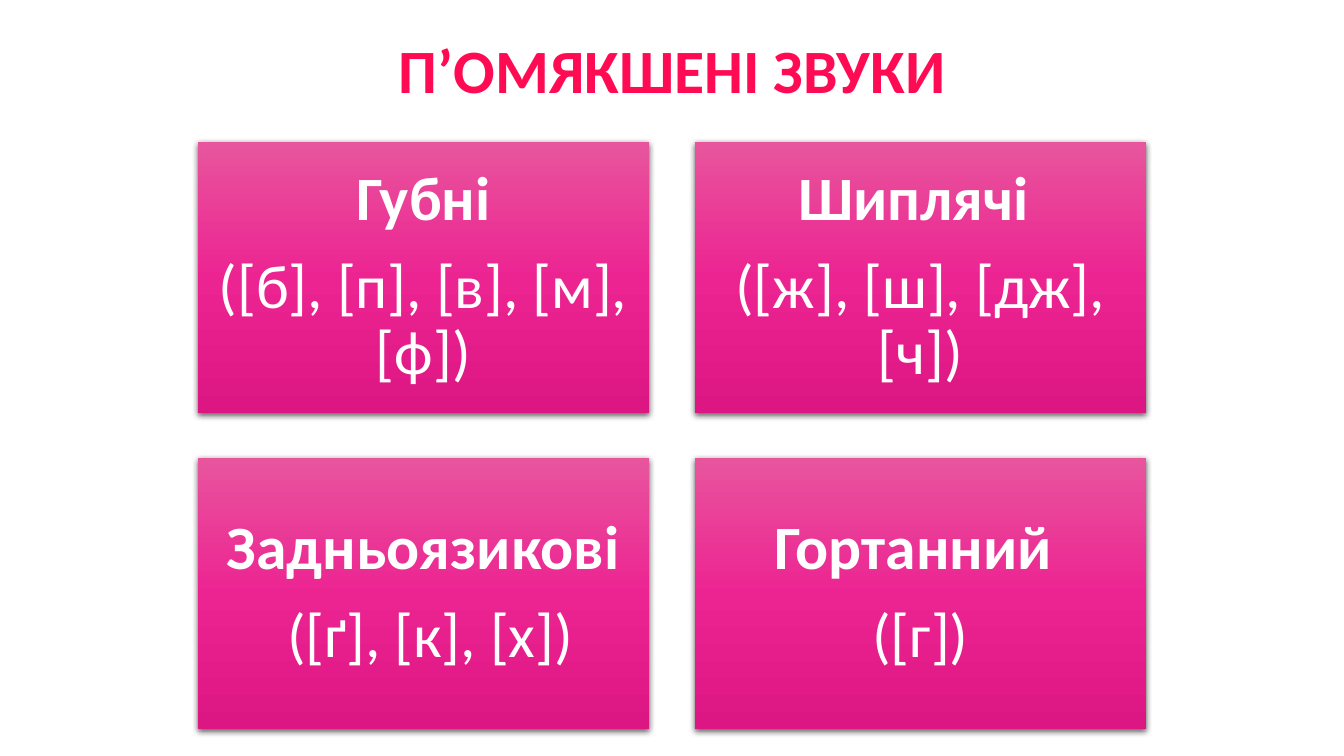
import copy

import lxml.etree
import pptx
import pptx.dml.color
import pptx.enum.dml
import pptx.enum.shapes
import pptx.enum.text
import pptx.oxml
import pptx.oxml.ns
import pptx.util

RGBColor = pptx.dml.color.RGBColor
WHITE = RGBColor(0xFF, 0xFF, 0xFF)
CRIMSON = RGBColor(0xFF, 0x0B, 0x53)
CARD_STOPS = [
    (0, RGBColor(0xE8, 0x55, 0x9D)),
    (0.5, RGBColor(0xEC, 0x24, 0x92)),
    (1, RGBColor(0xDC, 0x16, 0x83)),
]
SHADOW = (
    f'<a:outerShdw {pptx.oxml.ns.nsdecls("a")} blurRad="57150" dist="19050" '
    'dir="5400000" algn="ctr" rotWithShape="0">'
    '<a:srgbClr val="000000"><a:alpha val="63000"/></a:srgbClr></a:outerShdw>'
)

SOUND_GROUPS = [
    ("Губні", "([б], [п], [в], [м], [ф])"),
    ("Шиплячі ", "([ж], [ш], [дж], [ч])"),
    ("Задньоязикові", " ([ґ], [к], [х])"),
    ("Гортанний ", "([г])"),
]


def write(p, text, *, size=44, color=WHITE, bold=False, after=0):
    p.alignment = pptx.enum.text.PP_ALIGN.CENTER
    p.line_spacing = 0.9
    p.space_after = pptx.util.Pt(after)
    r = p.add_run()
    r.text = text
    r.font.name = "Calibri"
    r.font.size = pptx.util.Pt(size)
    r.font.bold = bold
    r.font.color.rgb = color


class SlideBuilder:
    left, top = 1.96, 1.41
    card_width, card_height = 4.48, 2.69
    column_step, row_step = 4.93, 3.13
    inset = 0.18
    paragraph_gap = 15.4

    def __init__(self, slide):
        self.s = slide

    def title(self, text):
        box = [pptx.util.Inches(v) for v in (0.92, 0, 11.5, 1.45)]
        tf = self.s.shapes.add_textbox(*box).text_frame
        tf.word_wrap = True
        tf.vertical_anchor = pptx.enum.text.MSO_ANCHOR.MIDDLE
        write(tf.paragraphs[0], text, color=CRIMSON, bold=True)

    def card(self, column, row, heading, sounds):
        sp = self.s.shapes.add_shape(
            pptx.enum.shapes.MSO_SHAPE.RECTANGLE,
            pptx.util.Inches(self.left + column * self.column_step),
            pptx.util.Inches(self.top + row * self.row_step),
            pptx.util.Inches(self.card_width),
            pptx.util.Inches(self.card_height),
        )
        self.paint(sp)
        tf = sp.text_frame
        tf.word_wrap = True
        tf.vertical_anchor = pptx.enum.text.MSO_ANCHOR.MIDDLE
        tf.margin_left = tf.margin_right = pptx.util.Inches(self.inset)
        tf.margin_top = tf.margin_bottom = pptx.util.Inches(self.inset)
        write(tf.paragraphs[0], heading, bold=True, after=self.paragraph_gap)
        write(tf.add_paragraph(), sounds, after=self.paragraph_gap)

    def paint(self, sp):
        sp.fill.gradient()
        sp.fill.gradient_angle = 270
        stop_list = sp._element.spPr.find(".//" + pptx.oxml.ns.qn("a:gsLst"))
        stop_list.append(copy.deepcopy(stop_list[0]))
        for stop, (position, color) in zip(sp.fill.gradient_stops, CARD_STOPS):
            stop.position = position
            stop.color.rgb = color
        sp.line.fill.background()
        sp.shadow.inherit = False
        effects = sp._element.spPr.find(pptx.oxml.ns.qn("a:effectLst"))
        effects.append(pptx.oxml.parse_xml(SHADOW))


def main():
    prs = pptx.Presentation()
    prs.slide_width = pptx.util.Inches(13.33)
    prs.slide_height = pptx.util.Inches(7.5)
    builder = SlideBuilder(prs.slides.add_slide(prs.slide_layouts[6]))
    builder.title("П’ОМЯКШЕНІ ЗВУКИ")
    for i, (heading, sounds) in enumerate(SOUND_GROUPS):
        row, column = divmod(i, 2)
        builder.card(column, row, heading, sounds)
    prs.save("out.pptx")


if __name__ == "__main__":
    main()
